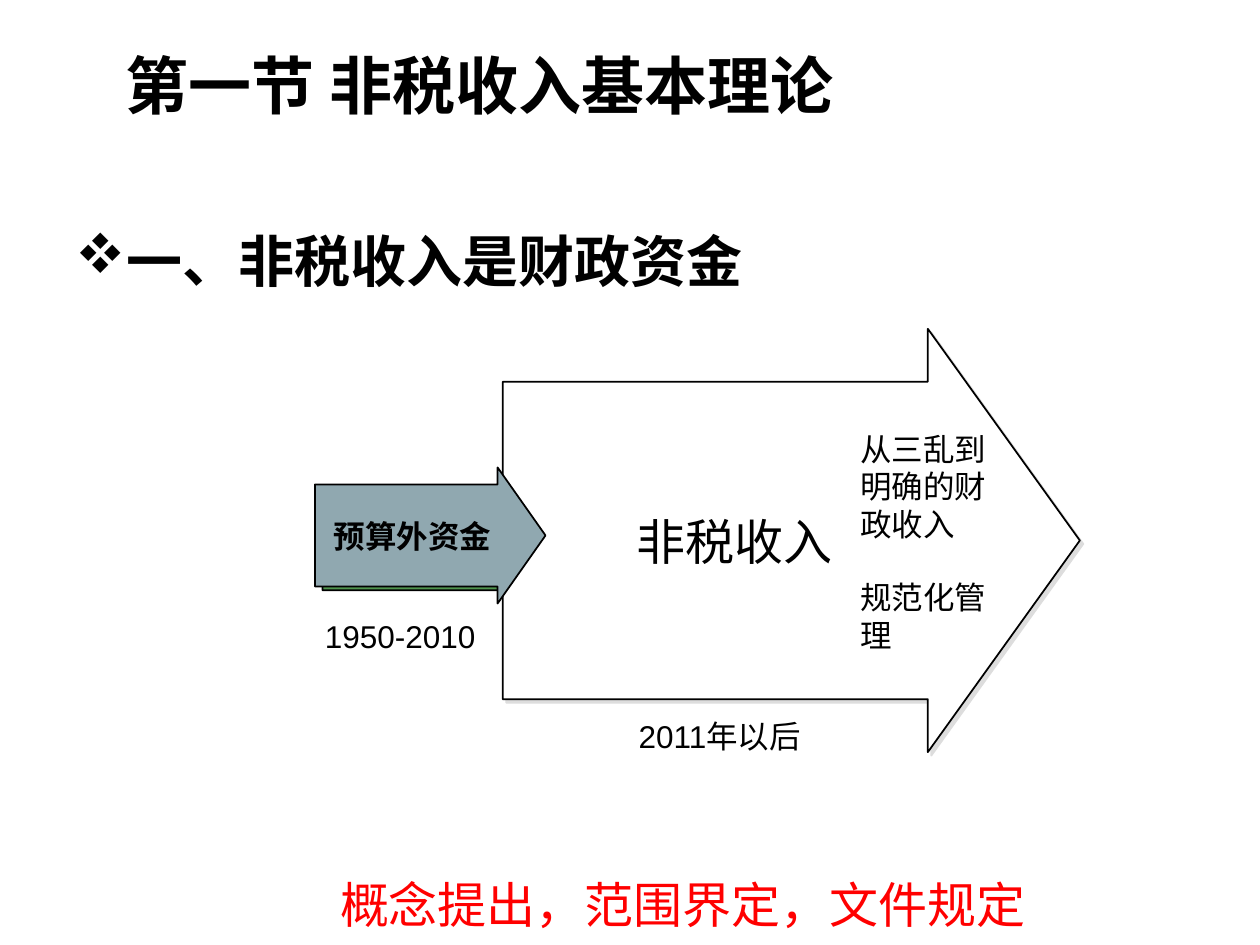
import pptx
import pptx.dml.color
import pptx.enum.shapes
import pptx.enum.text
import pptx.oxml
import pptx.oxml.ns
import pptx.util
from pptx.util import Inches

RGBColor = pptx.dml.color.RGBColor
Align = pptx.enum.text.PP_ALIGN
Anchor = pptx.enum.text.MSO_ANCHOR

BLACK = RGBColor(0x00, 0x00, 0x00)
WHITE = RGBColor(0xFF, 0xFF, 0xFF)
RED = RGBColor(0xFF, 0x00, 0x00)
GREEN = RGBColor(0x51, 0x94, 0x4E)
BLUE_GRAY = RGBColor(0x90, 0xA8, 0xB0)

HEADING_FONT = "Noto Sans CJK JP"
BODY_FONT = "Arial"


def parse_drawing(tag, attributes, content=""):
    """Return a DrawingML element with the given attributes and content."""
    namespace = pptx.oxml.ns.nsdecls("a")
    return pptx.oxml.parse_xml(f"<a:{tag} {namespace} {attributes}>{content}</a:{tag}>")


def style_paragraph(paragraph, size, font=BODY_FONT, color=BLACK, bold=False):
    """Set the font of a whole paragraph."""
    paragraph.font.size = pptx.util.Pt(size)
    paragraph.font.name = font
    paragraph.font.bold = bold
    paragraph.font.color.rgb = color
    if font == HEADING_FONT:
        latin = paragraph.font._element.find(pptx.oxml.ns.qn("a:latin"))
        latin.addnext(parse_drawing("ea", f'typeface="{font}"'))


def add_text(slide, box, text, size, anchor=Anchor.TOP, bullet=None, **style):
    """Add a wrapping one-paragraph text box."""
    frame = slide.shapes.add_textbox(*map(Inches, box)).text_frame
    frame.word_wrap = True
    frame.vertical_anchor = anchor
    paragraph = frame.paragraphs[0]
    paragraph.text = text
    paragraph.alignment = Align.LEFT
    if bullet:
        properties = paragraph._p.get_or_add_pPr()
        properties.set("marL", str(Inches(0.38)))
        properties.set("indent", str(-Inches(0.38)))
        properties.append(parse_drawing("buFont", 'typeface="Wingdings" charset="2"'))
        properties.append(parse_drawing("buChar", f'char="{bullet}"'))
    style_paragraph(paragraph, size, **style)


def add_arrow(group, box, head, fill):
    """Add an outlined right arrow to a group."""
    kind = pptx.enum.shapes.MSO_SHAPE.RIGHT_ARROW
    arrow = group.shapes.add_shape(kind, *map(Inches, box))
    arrow.adjustments[0] = 0.75
    arrow.adjustments[1] = head
    arrow.fill.solid()
    arrow.fill.fore_color.rgb = fill
    arrow.line.color.rgb = BLACK
    arrow.line.width = pptx.util.Pt(1)
    arrow.shadow.inherit = False
    return arrow


def label_arrow(arrow, text, size, bold=False):
    """Write a centred label inside an arrow."""
    frame = arrow.text_frame
    frame.word_wrap = False
    frame.vertical_anchor = Anchor.MIDDLE
    frame.margin_left = frame.margin_right = Inches(0.12)
    frame.margin_top = frame.margin_bottom = Inches(0.06)
    paragraph = frame.paragraphs[0]
    paragraph.text = text
    paragraph.alignment = Align.CENTER
    style_paragraph(paragraph, size, bold=bold)


def add_soft_shadow(arrow):
    """Give an arrow a light grey shadow to the lower right."""
    effects = arrow._element.spPr.find(pptx.oxml.ns.qn("a:effectLst"))
    effects.append(parse_drawing(
        "outerShdw", 'dist="35560" dir="2700000" algn="ctr" rotWithShape="0"',
        '<a:srgbClr val="DDDDDD"/>'))


def add_headings(slide, left, top):
    """Add the section title and the bulleted topic below it."""
    add_text(slide, (left + 0.4, top, 7.92, 0.62), "第一节 非税收入基本理论", 36,
             anchor=Anchor.MIDDLE, font=HEADING_FONT, bold=True)
    add_text(slide, (left, top + 1.39, 9, 0.75), "一、非税收入是财政资金", 32,
             bullet="v", font=HEADING_FONT, bold=True)


def add_arrow_diagram(slide, left, top):
    """Add the two nested arrows with their periods and remarks."""
    group = slide.shapes.add_group_shape()
    add_arrow(group, (left + 0.06, top + 1.13, 1.83, 1.08), 0.352, GREEN)
    large = add_arrow(group, (left + 1.49, top, 4.58, 3.36), 0.359, WHITE)
    add_soft_shadow(large)
    label_arrow(large, "非税收入", 28)
    small = add_arrow(group, (left, top + 1.1, 1.83, 1.08), 0.352, BLUE_GRAY)
    label_arrow(small, "预算外资金", 18, bold=True)

    captions = [
        ((-0.02, 2.24, 1.42, 0.4), "1950-2010"),
        ((2.47, 3.03, 1.84, 0.4), "2011年以后"),
        ((4.23, 0.75, 1.26, 1.01), "从三乱到明确的财政收入"),
        ((4.23, 1.93, 1.26, 0.71), "规范化管理"),
    ]
    for (x, y, width, height), text in captions:
        add_text(slide, (left + x, top + y, width, height), text, 18)


def add_summary(slide, left, top):
    """Add the red summary line."""
    add_text(slide, (left, top, 5.95, 0.57), "概念提出，范围界定，文件规定", 28,
             font=HEADING_FONT, color=RED)


def main():
    """Build and save the presentation."""
    presentation = pptx.Presentation()
    presentation.slide_width, presentation.slide_height = Inches(10), Inches(7.5)
    slide = presentation.slides.add_slide(presentation.slide_layouts[6])
    add_headings(slide, 0.5, 0.36)
    add_arrow_diagram(slide, 2.5, 2.61)
    add_summary(slide, 2.6, 6.89)
    presentation.save("out.pptx")


if __name__ == "__main__":
    main()
